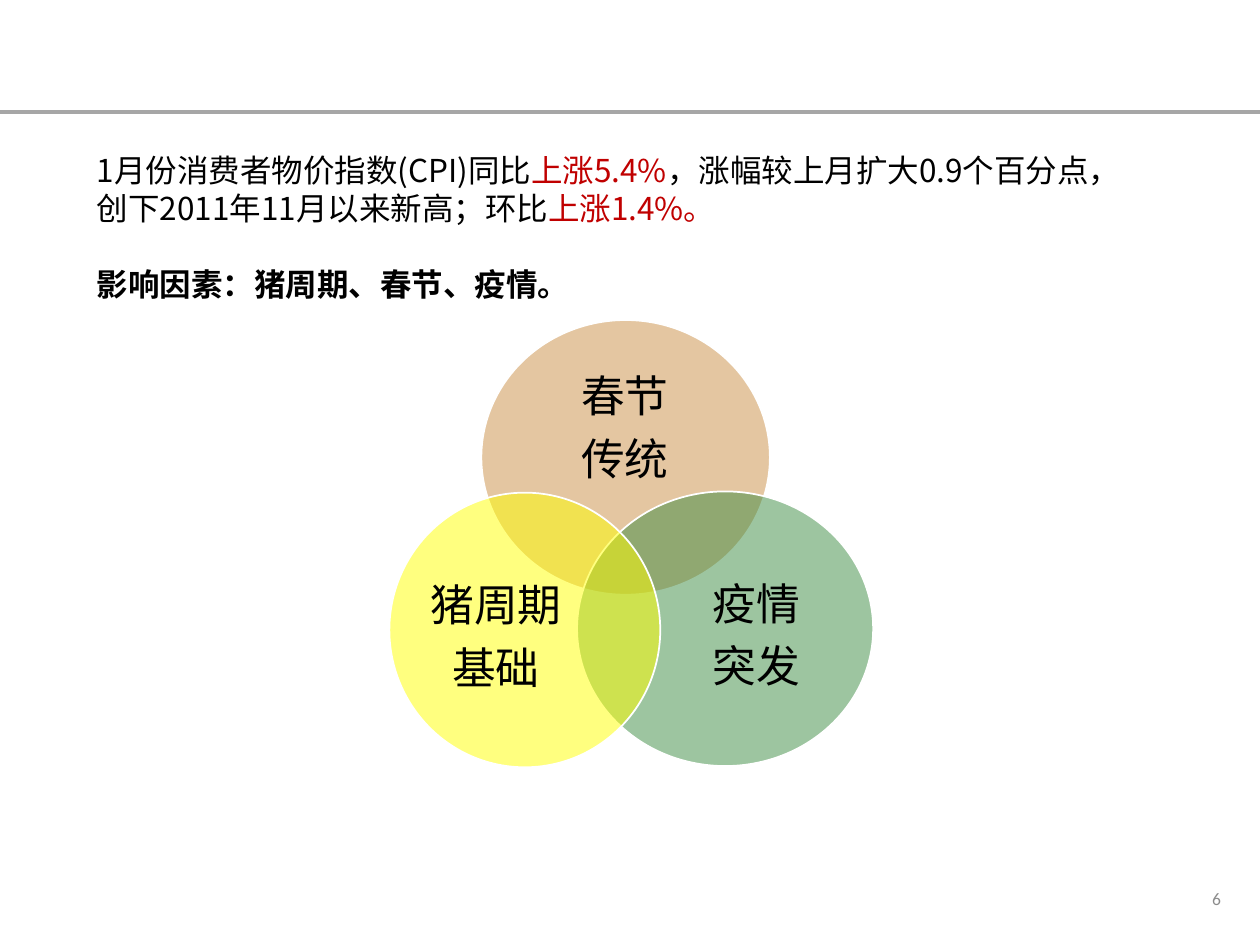
from dataclasses import dataclass

from lxml import etree
from pptx import Presentation
from pptx.dml.color import RGBColor
from pptx.enum.shapes import MSO_CONNECTOR, MSO_SHAPE
from pptx.enum.text import MSO_ANCHOR, PP_ALIGN
from pptx.oxml.ns import qn
from pptx.util import Inches, Pt


@dataclass(frozen=True)
class Theme:
    black: str = "000000"
    red: str = "C00000"
    gray: str = "8C8C8C"
    rule: str = "A6A6A6"
    white: str = "FFFFFF"
    tan: str = "CA8F45"
    green: str = "3D8C43"
    yellow: str = "FFFF00"
    latin: str = "Calibri"
    han: str = "Noto Sans CJK SC"
    body: int = 18
    label: int = 25
    page: int = 10


theme = Theme()


def add_box(at, inset, anchor):
    box = slide.shapes.add_textbox(*map(Inches, at))
    frame = box.text_frame
    frame.word_wrap = True
    frame.vertical_anchor = anchor
    frame.margin_left = frame.margin_right = Inches(inset)
    frame.margin_top = frame.margin_bottom = Inches(inset / 2)
    return frame


def add_run(para, text, size, color, face=theme.latin, bold=None):
    run = para.add_run()
    run.text = text
    font = run.font
    font.name, font.size, font.bold = face, Pt(size), bold
    font.color.rgb = RGBColor.from_string(color)
    if face == theme.han:
        etree.SubElement(run._r.get_or_add_rPr(), qn("a:ea"), typeface=face)


deck = Presentation()
deck.slide_width, deck.slide_height = Inches(10), Inches(7.5)
slide = deck.slides.add_slide(deck.slide_layouts[6])

# Header rule
rule = slide.shapes.add_connector(
    MSO_CONNECTOR.STRAIGHT, Inches(0), Inches(0.89), Inches(10), Inches(0.89))
rule.line.color.rgb = RGBColor.from_string(theme.rule)
rule.line.width = Pt(2)
etree.SubElement(rule._element.spPr, qn("a:effectLst"))

# Page number
para = add_box((7.52, 6.93, 2.25, 0.4), 0.08, MSO_ANCHOR.MIDDLE).paragraphs[0]
para.alignment = PP_ALIGN.RIGHT
add_run(para, "6", theme.page, theme.gray)

# Price index text
frame = add_box((0.67, 1.15, 8.11, 1.92), 0.1, MSO_ANCHOR.TOP)
para = frame.paragraphs[0]
para.line_spacing = Pt(21.7)
for text, color in [
    ("1月份消费者物价指数(CPI)同比", theme.black),
    ("上涨5.4%", theme.red),
    ("，涨幅较上月扩大0.9个百分点，创下2011年11月以来新高；环比", theme.black),
    ("上涨1.4%。", theme.red),
]:
    add_run(para, text, theme.body, color, theme.han)
para = frame.add_paragraph()
para.line_spacing = para.space_before = Pt(21.7)
add_run(para, "影响因素：猪周期、春节、疫情。", theme.body, theme.black, theme.han, True)

# Three overlapping factors
for color, oval_at, text_at, lines in [
    (theme.tan, (3.82, 2.54, 2.29, 2.18), (4.12, 2.92, 1.68, 0.98), ("春节", "传统")),
    (theme.green, (4.58, 3.9, 2.35, 2.18), (5.3, 4.46, 1.41, 1.2), ("疫情", "突发")),
    (theme.yellow, (3.09, 3.91, 2.15, 2.18), (3.29, 4.47, 1.29, 1.2), ("猪周期", "基础")),
]:
    oval = slide.shapes.add_shape(MSO_SHAPE.OVAL, *map(Inches, oval_at))
    oval.shadow.inherit = False
    oval.fill.solid()
    oval.fill.fore_color.rgb = RGBColor.from_string(color)
    tint = oval._element.spPr.find(qn("a:solidFill"))[0]
    etree.SubElement(tint, qn("a:alpha"), val="50000")
    oval.line.color.rgb = RGBColor.from_string(theme.white)
    oval.line.width = Pt(1)

    frame = add_box(text_at, 0, MSO_ANCHOR.MIDDLE)
    for row, text in enumerate(lines):
        para = frame.add_paragraph() if row else frame.paragraphs[0]
        para.alignment = PP_ALIGN.CENTER
        para.line_spacing = 0.9
        para.space_after = Pt(8.75)
        add_run(para, text, theme.label, theme.black)

deck.save("out.pptx")
